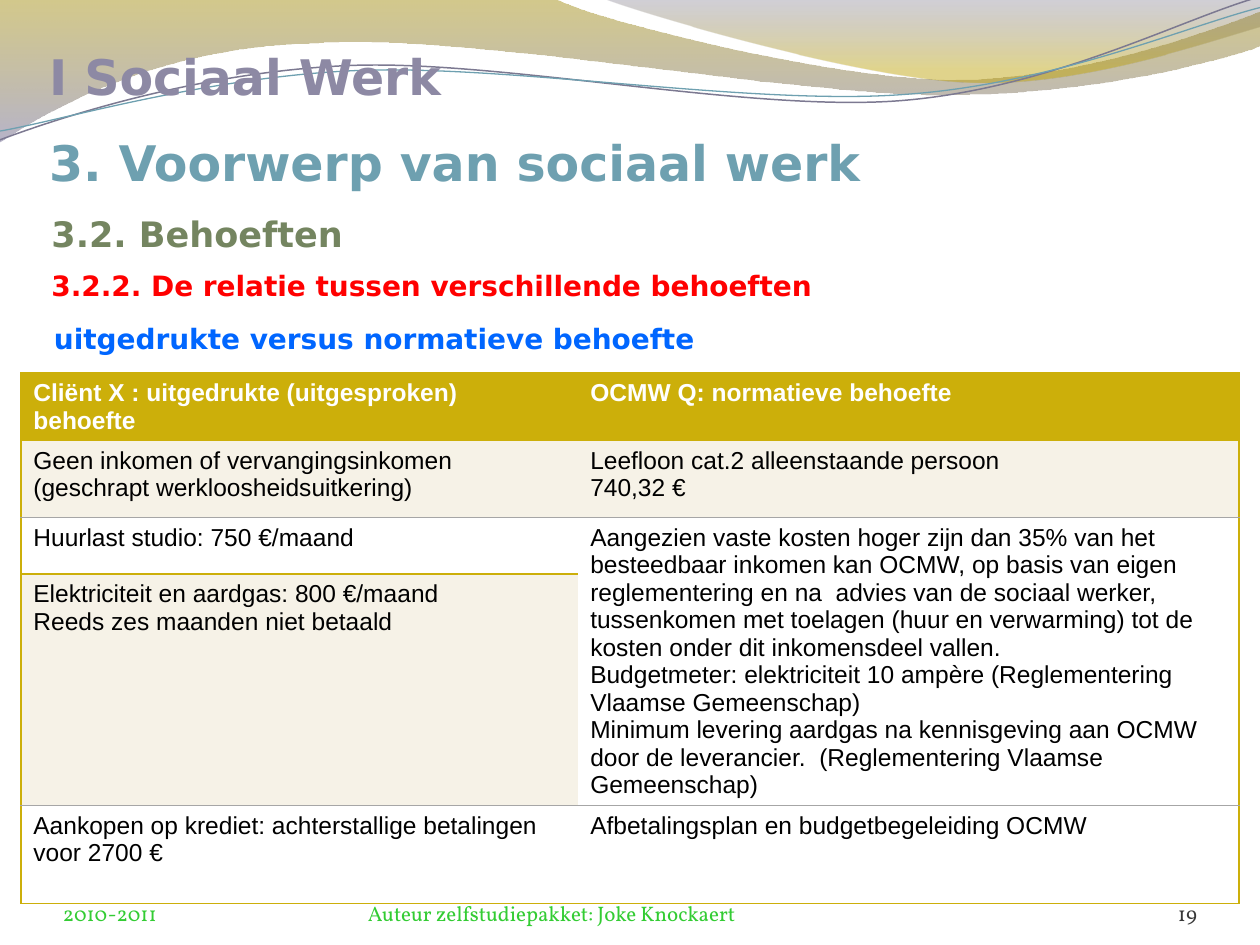
"""Build the slide on expressed versus normative needs."""
from math import cos, radians, sin
from lxml.etree import SubElement as Sub
from pptx import Presentation
from pptx.dml.color import RGBColor as Rgb
from pptx.enum.text import MSO_ANCHOR as Anchor, PP_ALIGN as Align
from pptx.oxml.ns import qn
from pptx.util import Inches, Pt

HUES = {
    "gold": "CCAF0A", "cream": "F6F2E7", "white": "FFFFFF", "black": "000000",
    "gray": "A6A6A6", "mauve": "8D89A4", "teal": "6EA0B0", "olive": "748560",
    "red": "FF0000", "blue": "0066FF", "green": "33CC33", "dark": "383838",
    "plum": "7C7991",
}
COLS, ROWS = 100, 75
HEAD, BODY, FOOT = "DejaVu Sans", "Arial", "Vollkorn"
TILT = 2.7

BANDS = [
    ((0, 0), [(44, -0.1), (47.6, 1.7, 66.4, 6.3, 75.8, 6.3),
              (85.3, 6.3, 95.8, 2.6, 100, 0.9), (100.1, 3.6),
              (98.3, 4.4, 87, 7.6, 74.6, 7.5), (62.2, 7.5, 38.2, 2.8, 25.7, 3.4),
              (12.9, 3.6, 4.6, 8.3, -0.1, 11.3), (0, 0)],
     [(0, "9E8700", 45), (100, "7B769C", 55)]),
    ((47.9, -0.1), [(50.9, 1.1, 68.2, 6.2, 76.9, 6.5),
                    (85.6, 6.9, 96.1, 3.2, 100, 2.1), (100, 0), (47.9, -0.1)],
     [(0, "66627C", 30), (80, "BDA100", 45)]),
]
WAVES = [
    ((0, 11.1), [(4.8, 9.3, 15.8, 5.7, 27.7, 5.2), (39.5, 4.7, 59.3, 8.9, 71.3, 8),
                 (83.3, 7.1, 93.8, 1.5, 99.8, -0.2)], (49.9, 5.75), "plum", 0.85),
    ((0, 10.4), [(4.7, 9.6, 16.4, 6.1, 28.3, 5.6), (40.3, 5.1, 59.7, 8.4, 71.7, 7.5),
                 (83.6, 6.7, 94.1, 2.1, 100, 0.6)], (49.95, 5.9), "teal", 0.75),
]
CELLS = [
    ["Cliënt X : uitgedrukte (uitgesproken) behoefte", "OCMW Q: normatieve behoefte"],
    ["Geen inkomen of vervangingsinkomen (geschrapt werkloosheidsuitkering)",
     "Leefloon cat.2 alleenstaande persoon\n740,32 €"],
    ["Huurlast studio: 750 €/maand",
     "Aangezien vaste kosten hoger zijn dan 35% van het besteedbaar inkomen kan OCMW, "
     "op basis van eigen reglementering en na  advies van de sociaal werker, "
     "tussenkomen met toelagen (huur en verwarming) tot de kosten onder dit "
     "inkomensdeel vallen.\n"
     "Budgetmeter: elektriciteit 10 ampère (Reglementering Vlaamse Gemeenschap)\n"
     "Minimum levering aardgas na kennisgeving aan OCMW door de leverancier.  "
     "(Reglementering Vlaamse Gemeenschap)"],
    ["Elektriciteit en aardgas: 800 €/maand\nReeds zes maanden niet betaald", ""],
    ["Aankopen op krediet: achterstallige betalingen voor 2700 €",
     "Afbetalingsplan en budgetbegeleiding OCMW"],
]
FILLS = ["gold", "cream", "white", "cream", "white"]
RULES = [("gold", 1), ("gold", 1), ("gray", 0.5), ("gold", 1), ("gray", 0.5), ("gold", 1)]


def unit(n):
    """Turn grid steps into a length."""
    return Inches(n / 10)


def write(frame, text, font=BODY, size=14, hue="black", bold=False,
          align=Align.LEFT, gap=0, more=False, hang=0, lead=0):
    """Write text into a frame, one paragraph a line."""
    for i, line in enumerate(text.split("\n")):
        para = frame.add_paragraph() if i or more else frame.paragraphs[0]
        para.alignment, para.space_before = align, Pt(gap)
        if hang:
            props = para._p.get_or_add_pPr()
            props.set("marL", str(unit(hang)))
            props.set("indent", str(-unit(hang)))
        if lead:
            para.add_line_break()
            mark = Sub(para._p[-1], qn("a:rPr"), sz=str(lead * 100), b="1")
            Sub(mark, qn("a:latin"), typeface=font)
        run = para.add_run()
        run.text = line
        run.font.name, run.font.size, run.font.bold = font, Pt(size), bold
        run.font.color.rgb = Rgb.from_string(HUES[hue])


def turn(spot, hub):
    """Rotate a point about a hub by the tilt."""
    a, x, y = radians(TILT), spot[0] - hub[0], spot[1] - hub[1]
    return hub[0] + x * cos(a) - y * sin(a), hub[1] + x * sin(a) + y * cos(a)


class Deck:
    """Hold the style and the current slide."""

    def __init__(self):
        """Open a deck with one blank slide."""
        self.show = Presentation()
        self.show.slide_width, self.show.slide_height = unit(COLS), unit(ROWS)
        self.slide = self.show.slides.add_slide(self.show.slide_layouts[6])

    def curve(self, start, steps, close, hub=None):
        """Draw an outline of straight and cubic steps."""
        spots = [start] + [s[i:i + 2] for s in steps for i in range(0, len(s), 2)]
        if hub:
            spots = [turn(s, hub) for s in spots]
        spots = [tuple(map(unit, s)) for s in spots]
        pen = self.slide.shapes.build_freeform(*spots[0])
        pen.add_line_segments(spots[1:], close)
        shape = pen.convert_to_shape()
        shape.shadow.inherit = False
        route = next(shape.element.iter(qn("a:path")))
        lines = iter(route.findall(qn("a:lnTo")))
        for step in steps:
            first = next(lines)
            if len(step) == 6:
                first.tag = qn("a:cubicBezTo")
                for line in (next(lines), next(lines)):
                    first.append(line[0])
                    route.remove(line)
        return shape

    def band(self, start, steps, stops):
        """Draw a closed band with a clear gradient."""
        shape = self.curve(start, steps, True)
        shape.line.fill.background()
        shape.fill.gradient()
        shape.fill.gradient_angle = 270
        marks = next(shape.element.iter(qn("a:gsLst")))
        for mark in list(marks):
            marks.remove(mark)
        for place, tint, alpha in stops:
            mark = Sub(marks, qn("a:gs"), pos=str(place * 1000))
            color = Sub(mark, qn("a:srgbClr"), val=tint)
            Sub(color, qn("a:alpha"), val=str(alpha * 1000))

    def wave(self, start, steps, hub, hue, width):
        """Draw an open, tilted line."""
        shape = self.curve(start, steps, False, hub)
        shape.rotation = 360 - TILT
        shape.fill.background()
        shape.line.color.rgb = Rgb.from_string(HUES[hue])
        shape.line.width = Pt(width)

    def box(self, x, y, w, h, pad=(1, 0.5, 1, 0.5), anchor=Anchor.TOP):
        """Add an empty text box and return its frame."""
        frame = self.slide.shapes.add_textbox(*map(unit, (x, y, w, h))).text_frame
        frame.word_wrap, frame.vertical_anchor = True, anchor
        (frame.margin_left, frame.margin_top,
         frame.margin_right, frame.margin_bottom) = map(unit, pad)
        return frame

    def edge(self, cell, side, rule):
        """Set one border of a cell, or clear it."""
        hue, width = rule or (None, 0)
        line = Sub(cell._tc.get_or_add_tcPr(), qn("a:ln" + side), w=str(Pt(width)))
        if hue:
            Sub(Sub(line, qn("a:solidFill")), qn("a:srgbClr"), val=HUES[hue])
        else:
            Sub(line, qn("a:noFill"))

    def table(self, x, y, wide, tall, high):
        """Add the table of needs."""
        size = map(unit, (x, y, sum(wide), high))
        holder = self.slide.shapes.add_table(len(tall), len(wide), *size)
        grid = holder.table
        grid.first_row = grid.horz_banding = False
        for col, w in zip(grid.columns, wide):
            col.width = unit(w)
        for row, h in zip(grid.rows, tall):
            row.height = unit(h)
        holder.height = unit(high)
        grid.cell(2, 1).merge(grid.cell(3, 1))
        for r, line in enumerate(CELLS):
            for c, text in enumerate(line):
                cell = grid.cell(r, c)
                inner = c == 1 and r in (2, 3)
                self.edge(cell, "L", None if c else RULES[0])
                self.edge(cell, "R", RULES[0] if c else None)
                self.edge(cell, "T", None if inner and r == 3 else RULES[r])
                self.edge(cell, "B", None if inner and r == 2 else RULES[r + 1])
                cell.fill.solid()
                tint = "white" if inner else FILLS[r]
                cell.fill.fore_color.rgb = Rgb.from_string(HUES[tint])
                if text:
                    write(cell.text_frame, text, bold=r == 0,
                          hue="black" if r else "white")


def main():
    """Build and save the slide."""
    deck = Deck()
    for band in BANDS:
        deck.band(*band)
    for wave in WAVES:
        deck.wave(*wave)
    deck.table(1.65, 29.6, (44.2, 52.5), (4.4, 6.1, 4.5, 14.7, 7.8), 43.8)

    for x, w, text, hue, align in (
            (5, 23.3, "2010-2011", "green", Align.LEFT),
            (29.2, 36.7, "Auteur zelfstudiepakket: Joke Knockaert", "green", Align.LEFT),
            (86.7, 8.3, "19", "dark", Align.RIGHT)):
        foot = deck.box(x, 69.5, w, 4, (0, 0, 0, 0), Anchor.BOTTOM)
        write(foot, text, font=FOOT, size=12, hue=hue, align=align)

    title = deck.box(3.9, 3.1, 91.7, 12.1, (0, 0.5, 0, 0), Anchor.BOTTOM)
    write(title, "I Sociaal Werk", font=HEAD, size=28, hue="mauve", bold=True, gap=6)
    write(title, "3. Voorwerp van sociaal werk", font=HEAD, size=28, hue="teal",
          bold=True, gap=6, more=True, lead=8)
    part = deck.box(3.1, 16.4, 85.9, 13.5)
    write(part, "3.2. Behoeften", font=HEAD, size=20, hue="olive", bold=True, hang=3)
    write(part, "3.2.2. De relatie tussen verschillende behoeften", font=HEAD,
          size=16, hue="red", bold=True, gap=8, more=True, hang=3)
    write(deck.box(3.3, 25, 94.2, 6.4), "uitgedrukte versus normatieve behoefte",
          font=HEAD, size=16, hue="blue", bold=True)
    deck.show.save("out.pptx")


if __name__ == "__main__":
    main()
